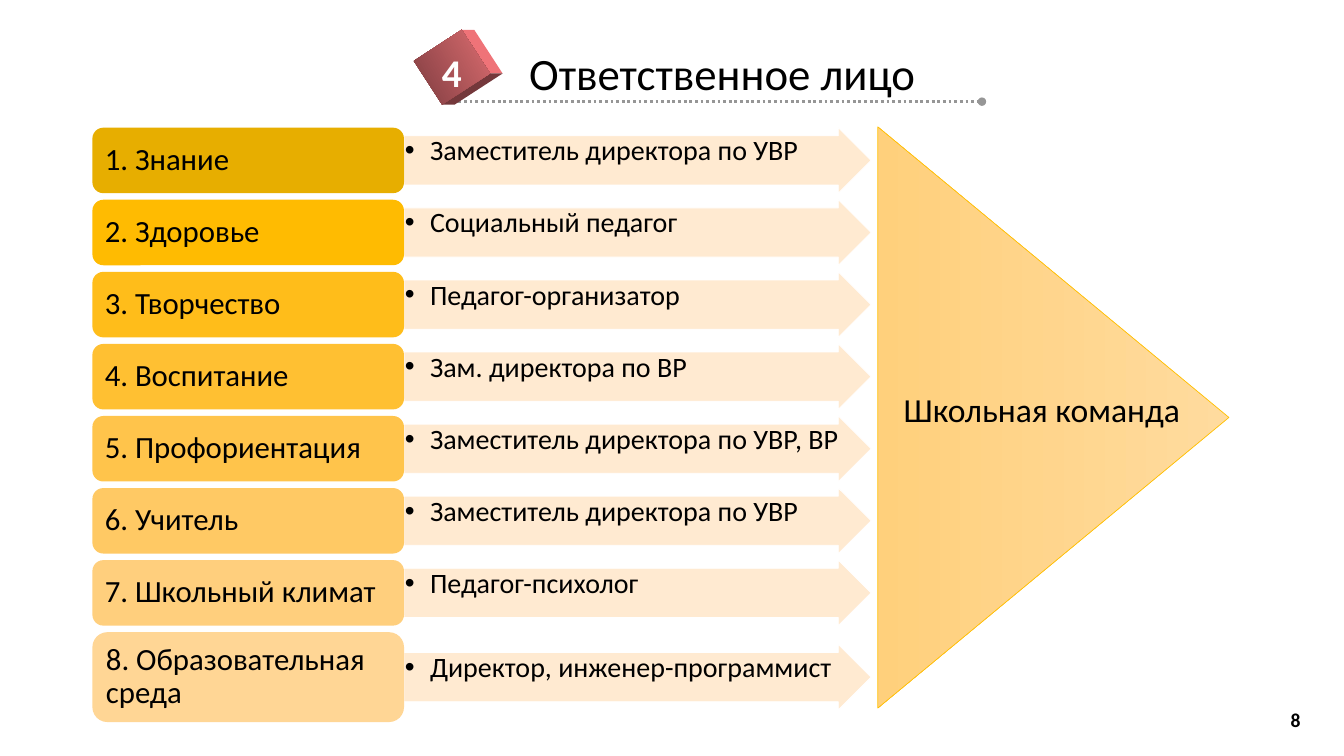
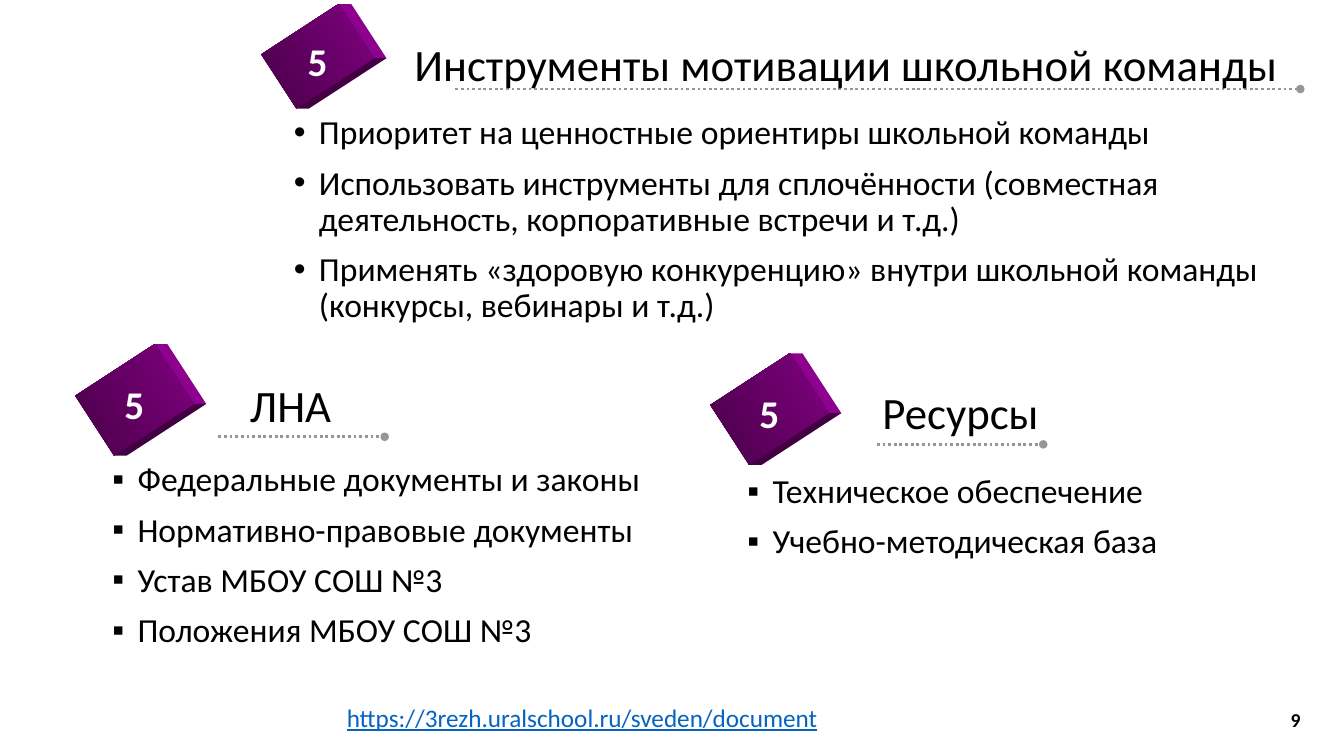
from math import cos, radians, sin

from lxml.etree import SubElement
from pptx import Presentation
from pptx.dml.color import RGBColor
from pptx.enum.dml import MSO_LINE
from pptx.enum.shapes import MSO_CONNECTOR, MSO_SHAPE as Preset
from pptx.enum.text import MSO_ANCHOR as Anchor, PP_ALIGN as Align
from pptx.oxml.ns import qn
from pptx.util import Inches, Pt

# Grid: 160 columns by 90 rows, twelve cells to the inch
COLUMNS, ROWS = 160, 90
CELL = Inches(1) / 12

FONT = "Calibri"
BLACK = RGBColor(0x00, 0x00, 0x00)
WHITE = RGBColor(0xFF, 0xFF, 0xFF)
GRAY = RGBColor(0x96, 0x96, 0x96)
LINK = RGBColor(0x05, 0x63, 0xC1)
GOLD = RGBColor(0xFF, 0xC0, 0x00)
CREAM = RGBColor(0xFF, 0xE8, 0xCC)
TRIANGLE = (RGBColor(0xFF, 0xDB, 0x9E), RGBColor(0xFF, 0xD0, 0x7C))

# Cube colours: front from, front to, side, bottom
RED_CUBE = (RGBColor(0x7E, 0x3D, 0x40), RGBColor(0xDC, 0x6C, 0x70),
            RGBColor(0xEF, 0x73, 0x78), RGBColor(0x74, 0x38, 0x3B))
PURPLE_CUBE = (RGBColor(0x48, 0x00, 0x48), RGBColor(0x80, 0x00, 0x80),
               RGBColor(0x8E, 0x00, 0x8E), RGBColor(0x42, 0x00, 0x42))
CUBE_ANGLE = radians(57)
CUBE_SHIFT, CUBE_DEPTH = 0.5, 1.5

DUTIES = [
    ("1. Знание", "Заместитель директора по УВР", RGBColor(0xE7, 0xAE, 0x00)),
    ("2. Здоровье", "Социальный педагог", RGBColor(0xFF, 0xBB, 0x01)),
    ("3. Творчество", "Педагог-организатор", RGBColor(0xFF, 0xBD, 0x1A)),
    ("4. Воспитание", "Зам. директора по ВР", RGBColor(0xFF, 0xC0, 0x32)),
    ("5. Профориентация", "Заместитель директора по УВР, ВР", RGBColor(0xFF, 0xC4, 0x4B)),
    ("6. Учитель", "Заместитель директора по УВР", RGBColor(0xFF, 0xC9, 0x64)),
    ("7. Школьный климат", "Педагог-психолог", RGBColor(0xFF, 0xCF, 0x7D)),
    ("8. Образовательная\nсреда", "Директор, инженер-программист", RGBColor(0xFF, 0xD6, 0x95)),
]


def cells(*values):
    return [round(value * CELL) for value in values]


class Deck:
    """Holds the shared style and the current slide."""

    def __init__(self):
        self.presentation = Presentation()
        self.presentation.slide_width, self.presentation.slide_height = cells(COLUMNS, ROWS)
        self.slide = None

    def new_slide(self, number):
        self.slide = self.presentation.slides.add_slide(self.presentation.slide_layouts[6])
        self.text((120, 83.3, 36, 4.8), str(number), 14, bold=True,
                  align=Align.RIGHT, anchor=Anchor.MIDDLE)

    def set_text(self, frame, text, size, color=BLACK, bold=False, underline=False,
                 align=Align.LEFT, anchor=Anchor.TOP, insets=(1.2, 0.6, 1.2, 0.6),
                 bullet=None, spacing=1.0, before=0, wrap=True):
        frame.text = text
        frame.word_wrap = wrap
        frame.vertical_anchor = anchor
        (frame.margin_left, frame.margin_top,
         frame.margin_right, frame.margin_bottom) = cells(*insets)
        for index, paragraph in enumerate(frame.paragraphs):
            if bullet:
                properties = paragraph._p.get_or_add_pPr()
                properties.set("marL", str(Inches(0.25)))
                properties.set("indent", str(-Inches(0.25)))
                SubElement(properties, qn("a:buFont")).set("typeface", "Arial")
                SubElement(properties, qn("a:buChar")).set("char", bullet)
            paragraph.alignment = align
            paragraph.line_spacing = spacing
            if index:
                paragraph.space_before = Pt(before)
            for run in paragraph.runs:
                font = run.font
                font.name, font.size, font.bold = FONT, Pt(size), bold
                font.underline = underline
                font.color.rgb = color

    def text(self, box, text, size, **style):
        frame = self.slide.shapes.add_textbox(*cells(*box)).text_frame
        self.set_text(frame, text, size, **style)

    def bullets(self, box, lines, bullet):
        self.text(box, "\n".join(lines), 24, bullet=bullet, spacing=0.9, before=10)

    def paint(self, shape, fill, line=None, angle=270):
        """Fill with one colour, or with a gradient when given a pair."""
        shape.shadow.inherit = False
        if isinstance(fill, RGBColor):
            shape.fill.solid()
            shape.fill.fore_color.rgb = fill
        else:
            shape.fill.gradient()
            shape.fill.gradient_angle = angle
            for stop, color, position in zip(shape.fill.gradient_stops, fill, (0, 1)):
                stop.color.rgb, stop.position = color, position
        if line is None:
            shape.line.fill.background()
        else:
            shape.line.color.rgb, shape.line.width = line, Pt(0.5)

    def shape(self, preset, box, fill, line=None):
        shape = self.slide.shapes.add_shape(preset, *cells(*box))
        self.paint(shape, fill, line)
        return shape

    def polygon(self, points, fill, angle=270):
        start, *others = [cells(*point) for point in points]
        builder = self.slide.shapes.build_freeform(*start)
        builder.add_line_segments(others, close=True)
        shape = builder.convert_to_shape()
        self.paint(shape, fill, angle=angle)
        return shape

    def rule(self, left, right, top):
        line = self.slide.shapes.add_connector(MSO_CONNECTOR.STRAIGHT,
                                               *cells(left, top, right, top))
        line.line.color.rgb, line.line.width = GRAY, Pt(2)
        line.line.dash_style = MSO_LINE.ROUND_DOT
        SubElement(line.line._get_or_add_ln(), qn("a:tailEnd")).set("type", "oval")
        SubElement(line._element.spPr, qn("a:effectLst"))

    def cube(self, number, center, size, colors):
        """A turned block whose front face carries the number."""
        x, y = center[0] + CUBE_SHIFT, center[1]
        half_width, half_height = size[0] / 2, size[1] / 2
        corners = []
        for a, b in ((-1, -1), (1, -1), (1, 1), (-1, 1)):
            across, down = a * half_width, b * half_height
            corners.append((x + across * cos(CUBE_ANGLE) - down * sin(CUBE_ANGLE),
                            y + across * sin(CUBE_ANGLE) + down * cos(CUBE_ANGLE)))
        back = [(left + CUBE_DEPTH, top) for left, top in corners]
        for first, color in enumerate(colors[2:]):
            second = first + 1
            self.polygon((corners[first], back[first], back[second], corners[second]), color)
        front = self.polygon(corners, colors[:2], angle=30)
        self.set_text(front.text_frame, number, 28, color=WHITE, bold=True, wrap=False,
                      align=Align.CENTER, anchor=Anchor.MIDDLE, insets=(0, 1, 0, 0))

    def heading(self, number, title, box, rule, center, size, colors):
        self.rule(*rule)
        self.cube(number, center, size, colors)
        self.text(box, title, 32, align=Align.CENTER)

    def duty(self, top, height, label, person, color):
        """A rounded label with an arrow naming who is responsible."""
        arrow_height = 7.8
        arrow = self.shape(Preset.RIGHT_ARROW,
                           (48.1, top + (height - arrow_height) / 2, 55.6, arrow_height),
                           CREAM, WHITE)
        arrow.adjustments[0] = 0.75
        fill = arrow._element.spPr.find(qn("a:solidFill"))
        SubElement(fill[0], qn("a:alpha")).set("val", "90000")
        self.set_text(arrow.text_frame, person, 20, insets=(0.1,) * 4, bullet="•", spacing=0.9)
        box = self.shape(Preset.ROUNDED_RECTANGLE, (11, top, 37.1, height), color)
        self.set_text(box.text_frame, label, 22, anchor=Anchor.MIDDLE,
                      insets=(1.1, 0.6, 1.1, 0.6), spacing=0.9)


def responsible_slide(deck):
    deck.new_slide(8)
    deck.heading("4", "Ответственное лицо", (61.6, 4.8, 48.8, 7.7), (53.9, 116.9, 12.1),
                 (53.3, 8), (6.2, 6.8), RED_CUBE)
    # Rows of duties, the last one taller
    for index, (label, person, color) in enumerate(DUTIES):
        height = 10.7 if "\n" in label else 7.8
        deck.duty(15.2 + index * 8.58, height, label, person, color)
    # Team triangle
    triangle = deck.shape(Preset.ISOSCELES_TRIANGLE, (90.8, 28.8, 69.2, 41.8), TRIANGLE, GOLD)
    triangle.rotation = 90
    deck.text((106.4, 46.2, 41, 7.1), "Школьная команда", 24, spacing=0.9)


def motivation_slide(deck):
    deck.new_slide(9)
    # Motivation tools
    deck.heading("5", "Инструменты мотивации школьной команды", (46.7, 3.8, 108.1, 7.7),
                 (54.2, 154.8, 10.6), (37.3, 6.7), (7.7, 11), PURPLE_CUBE)
    deck.bullets((33.8, 13.2, 119.5, 29), [
        "Приоритет на ценностные ориентиры школьной команды",
        "Использовать инструменты для сплочённости (совместная деятельность, "
        "корпоративные встречи и т.д.)",
        "Применять «здоровую конкуренцию» внутри школьной команды "
        "(конкурсы, вебинары и т.д.)",
    ], "•")
    # Local regulations
    deck.heading("5", "ЛНА", (25, 44.4, 19.2, 7.7), (26, 45.8, 52),
                 (15.5, 47.6), (8.5, 11.3), PURPLE_CUBE)
    deck.bullets((12.2, 54.5, 72.8, 29), [
        "Федеральные документы и законы",
        "Нормативно-правовые документы",
        "Устав МБОУ СОШ №3",
        "Положения МБОУ СОШ №3",
    ], "▪")
    # Resources
    deck.heading("5", "Ресурсы", (100.6, 45.2, 27.5, 7.7), (104.4, 124.2, 52.9),
                 (91.1, 48.7), (8.5, 11.3), PURPLE_CUBE)
    deck.bullets((87.8, 55.9, 61.3, 29), [
        "Техническое обеспечение",
        "Учебно-методическая база",
    ], "▪")
    # Source address
    deck.text((40.1, 83, 59.2, 5), "https://3rezh.uralschool.ru/sveden/document", 18,
              color=LINK, underline=True, wrap=False)


def main():
    deck = Deck()
    responsible_slide(deck)
    motivation_slide(deck)
    deck.presentation.save("out.pptx")


if __name__ == "__main__":
    main()
